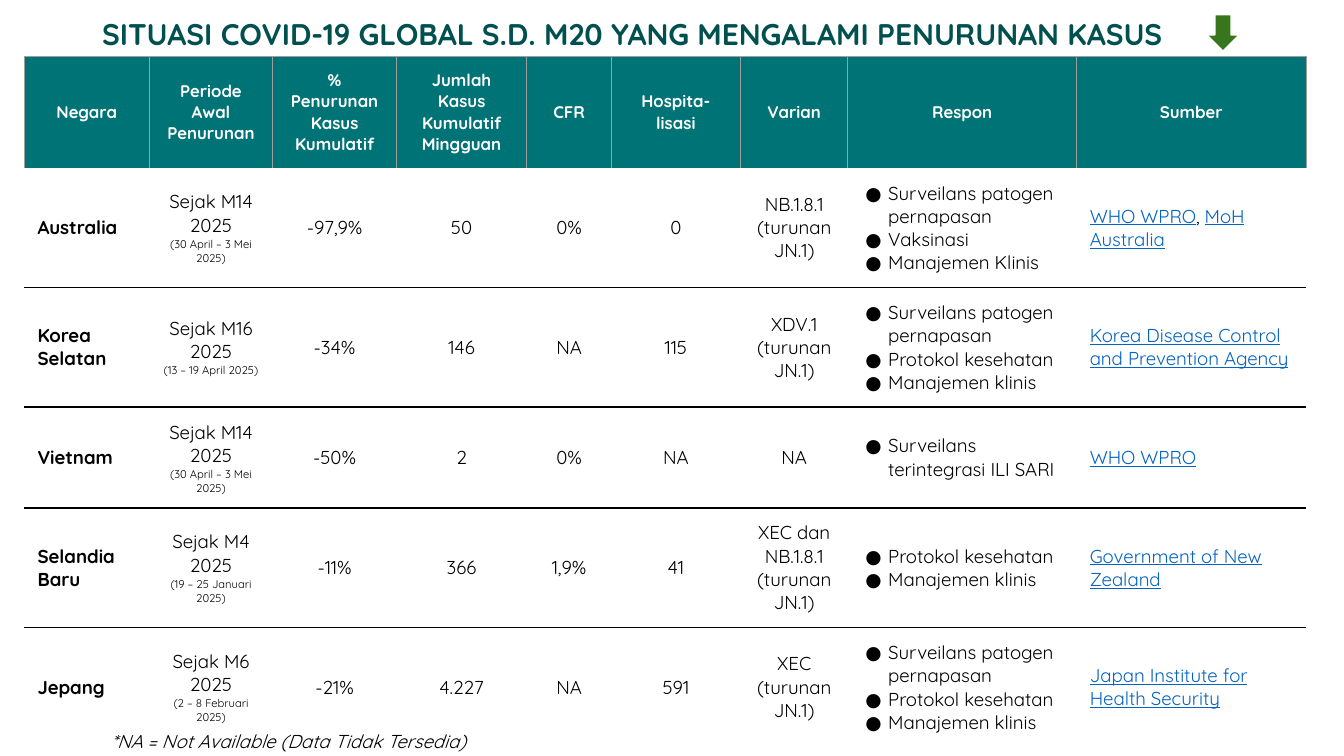
from dataclasses import dataclass

from lxml.etree import SubElement
from pptx import Presentation
from pptx.dml.color import RGBColor
from pptx.enum.shapes import MSO_SHAPE
from pptx.enum.text import MSO_ANCHOR, PP_ALIGN
from pptx.oxml.ns import qn
from pptx.slide import Slide
from pptx.table import _Cell
from pptx.text.text import TextFrame, _Paragraph
from pptx.util import Inches, Pt


@dataclass(frozen=True)
class Theme:
    font: str = "Quicksand"
    title: str = "005050"
    header: str = "007376"
    grid: str = "9E9E9E"
    ink: str = "000000"
    paper: str = "FFFFFF"
    link: str = "0563C1"
    decline: str = "38761D"
    title_size: float = 16
    header_size: float = 9
    body_size: float = 10
    date_size: float = 6
    grid_width: float = 0.75
    rule_width: float = 1
    no_style: str = "{2D5ABB26-0587-4C30-8999-92F81FD0307C}"


@dataclass(frozen=True)
class Span:
    text: str
    size: float
    color: str
    bold: bool = False
    italic: bool = False
    underline: bool = False


@dataclass(frozen=True)
class Country:
    name: str
    period: str
    dates: str
    figures: tuple[str, ...]
    variant: str
    responses: tuple[str, ...]
    sources: tuple[str, ...]


THEME = Theme()
COLUMN_WIDTHS = (0.93, 0.92, 0.92, 0.97, 0.63, 0.96, 0.8, 1.7, 1.71)
ROW_HEIGHTS = (0.83, 0.89, 0.89, 0.75, 0.89, 0.89)
HEADINGS = (
    ("Negara",),
    ("Periode Awal Penurunan",),
    ("% Penurunan", "Kasus Kumulatif"),
    ("Jumlah Kasus Kumulatif Mingguan",),
    ("CFR",),
    ("Hospita- lisasi",),
    ("Varian",),
    ("Respon",),
    ("Sumber",),
)
SURVEILLANCE = "Surveilans patogen pernapasan"
PROTOCOL = "Protokol kesehatan"
MANAGEMENT = "Manajemen klinis"
COUNTRIES = (
    Country("Australia", "Sejak M14 2025", "(30 April – 3 Mei 2025)",
            ("-97,9%", "50", "0%", "0"), "NB.1.8.1 (turunan JN.1)",
            (SURVEILLANCE, "Vaksinasi", "Manajemen Klinis"),
            ("WHO WPRO", "MoH Australia")),
    Country("Korea Selatan", "Sejak M16 2025", "(13 – 19 April 2025)",
            ("-34%", "146", "NA", "115"), "XDV.1 (turunan JN.1)",
            (SURVEILLANCE, PROTOCOL, MANAGEMENT),
            ("Korea Disease Control and Prevention Agency",)),
    Country("Vietnam", "Sejak M14 2025", "(30 April – 3 Mei 2025)",
            ("-50%", "2", "0%", "NA"), "NA",
            ("Surveilans terintegrasi ILI SARI",), ("WHO WPRO",)),
    Country("Selandia Baru", "Sejak M4 2025", "(19 – 25 Januari 2025)",
            ("-11%", "366", "1,9%", "41"), "XEC dan NB.1.8.1 (turunan JN.1)",
            (PROTOCOL, MANAGEMENT), ("Government of New Zealand",)),
    Country("Jepang", "Sejak M6 2025", "(2 – 8 Februari 2025)",
            ("-21%", "4.227", "NA", "591"), "XEC (turunan JN.1)",
            (SURVEILLANCE, PROTOCOL, MANAGEMENT),
            ("Japan Institute for Health Security",)),
)


def body(text: str, bold: bool = False) -> Span:
    return Span(text, THEME.body_size, THEME.ink, bold)


def add_bullet(paragraph: _Paragraph) -> None:
    properties = paragraph._p.get_or_add_pPr()
    properties.set("marL", str(Inches(0.2)))
    properties.set("indent", str(Inches(-0.17)))
    color = SubElement(properties, qn("a:buClr"))
    SubElement(color, qn("a:srgbClr"), val=THEME.ink)
    SubElement(properties, qn("a:buFont"), typeface=THEME.font)
    SubElement(properties, qn("a:buChar"), char="●")


def write(frame: TextFrame, lines: list[list[Span]],
          align: PP_ALIGN = PP_ALIGN.LEFT, bulleted: bool = False) -> None:
    frame.word_wrap = True
    for index, spans in enumerate(lines):
        paragraph = frame.add_paragraph() if index else frame.paragraphs[0]
        if bulleted:
            add_bullet(paragraph)
        paragraph.alignment = align
        for span in spans:
            run = paragraph.add_run()
            run.text = span.text
            font = run.font
            font.name = THEME.font
            font.size = Pt(span.size)
            font.color.rgb = RGBColor.from_string(span.color)
            font.bold = span.bold
            font.italic = span.italic
            font.underline = span.underline


def add_border(cell: _Cell, side: str, color: str, width: float) -> None:
    line = SubElement(cell._tc.get_or_add_tcPr(), qn(f"a:ln{side}"), w=str(Pt(width)))
    fill = SubElement(line, qn("a:solidFill"))
    SubElement(fill, qn("a:srgbClr"), val=color)


def finish_cell(cell: _Cell, fill: str, sides: str, color: str, width: float) -> None:
    cell.vertical_anchor = MSO_ANCHOR.MIDDLE
    cell.margin_left = cell.margin_right = Inches(0.1)
    cell.margin_top = cell.margin_bottom = Inches(0.1)
    for side in sides:
        add_border(cell, side, color, width)
    cell.fill.solid()
    cell.fill.fore_color.rgb = RGBColor.from_string(fill)


def source_spans(sources: tuple[str, ...]) -> list[Span]:
    spans = []
    for index, source in enumerate(sources):
        if index:
            spans.append(body(", "))
        spans.append(Span(source, THEME.body_size, THEME.link, underline=True))
    return spans


def write_country(cells: list[_Cell], country: Country) -> None:
    name, period, *figures, variant, response, source = cells
    write(name.text_frame, [[body(country.name, bold=True)]])
    dates = Span(country.dates, THEME.date_size, THEME.ink)
    write(period.text_frame, [[body(country.period)], [dates]], PP_ALIGN.CENTER)
    for cell, value in zip([*figures, variant], [*country.figures, country.variant]):
        write(cell.text_frame, [[body(value)]], PP_ALIGN.CENTER)
    write(response.text_frame, [[body(item)] for item in country.responses], bulleted=True)
    write(source.text_frame, [source_spans(country.sources)])


def add_situation_table(slide: Slide) -> None:
    frame = slide.shapes.add_table(
        len(ROW_HEIGHTS), len(COLUMN_WIDTHS), Inches(0.18), Inches(0.42),
        Inches(sum(COLUMN_WIDTHS)), Inches(sum(ROW_HEIGHTS)))
    table = frame.table
    table.horz_banding = False
    table._tbl.tblPr.find(qn("a:tableStyleId")).text = THEME.no_style
    for column, width in zip(table.columns, COLUMN_WIDTHS):
        column.width = Inches(width)
    for row, height in zip(table.rows, ROW_HEIGHTS):
        row.height = Inches(height)

    header, *country_rows = table.rows
    for cell, heading in zip(header.cells, HEADINGS):
        lines = [[Span(text, THEME.header_size, THEME.paper, bold=True)] for text in heading]
        write(cell.text_frame, lines, PP_ALIGN.CENTER)
        finish_cell(cell, THEME.header, "LRT", THEME.grid, THEME.grid_width)
    for row, country in zip(country_rows, COUNTRIES):
        write_country(list(row.cells), country)
        sides = "" if country is COUNTRIES[-1] else "B"
        for cell in row.cells:
            finish_cell(cell, THEME.paper, sides, THEME.ink, THEME.rule_width)


def add_label(slide: Slide, box: tuple[float, float, float, float],
              inset: tuple[float, float], span: Span, spacing: float = 1.0) -> None:
    frame = slide.shapes.add_textbox(*map(Inches, box)).text_frame
    frame.margin_left = frame.margin_right = Inches(inset[0])
    frame.margin_top = frame.margin_bottom = Inches(inset[1])
    write(frame, [[span]])
    frame.paragraphs[0].line_spacing = spacing


def add_decline_arrow(slide: Slide) -> None:
    arrow = slide.shapes.add_shape(
        MSO_SHAPE.DOWN_ARROW, Inches(8.98), Inches(0.11), Inches(0.24), Inches(0.27))
    arrow.shadow.inherit = False
    arrow.fill.solid()
    arrow.fill.fore_color.rgb = RGBColor.from_string(THEME.decline)
    arrow.line.color.rgb = RGBColor.from_string(THEME.paper)
    arrow.line.width = Pt(THEME.grid_width)


def main() -> None:
    deck = Presentation()
    deck.slide_width = Inches(10)
    deck.slide_height = Inches(10 * 9 / 16)
    slide = deck.slides.add_slide(deck.slide_layouts[6])
    add_label(slide, (0.69, 0.11, 8.62, 0.34), (0.07, 0.04),
              Span("SITUASI COVID-19 GLOBAL S.D. M20 YANG MENGALAMI PENURUNAN KASUS",
                   THEME.title_size, THEME.title, bold=True), 0.9)
    add_situation_table(slide)
    add_decline_arrow(slide)
    add_label(slide, (0.73, 5.35, 4.69, 0.23), (0.1, 0.1),
              Span("*NA = Not Available (Data Tidak Tersedia)",
                   THEME.body_size, THEME.ink, italic=True))
    deck.save("out.pptx")


if __name__ == "__main__":
    main()
